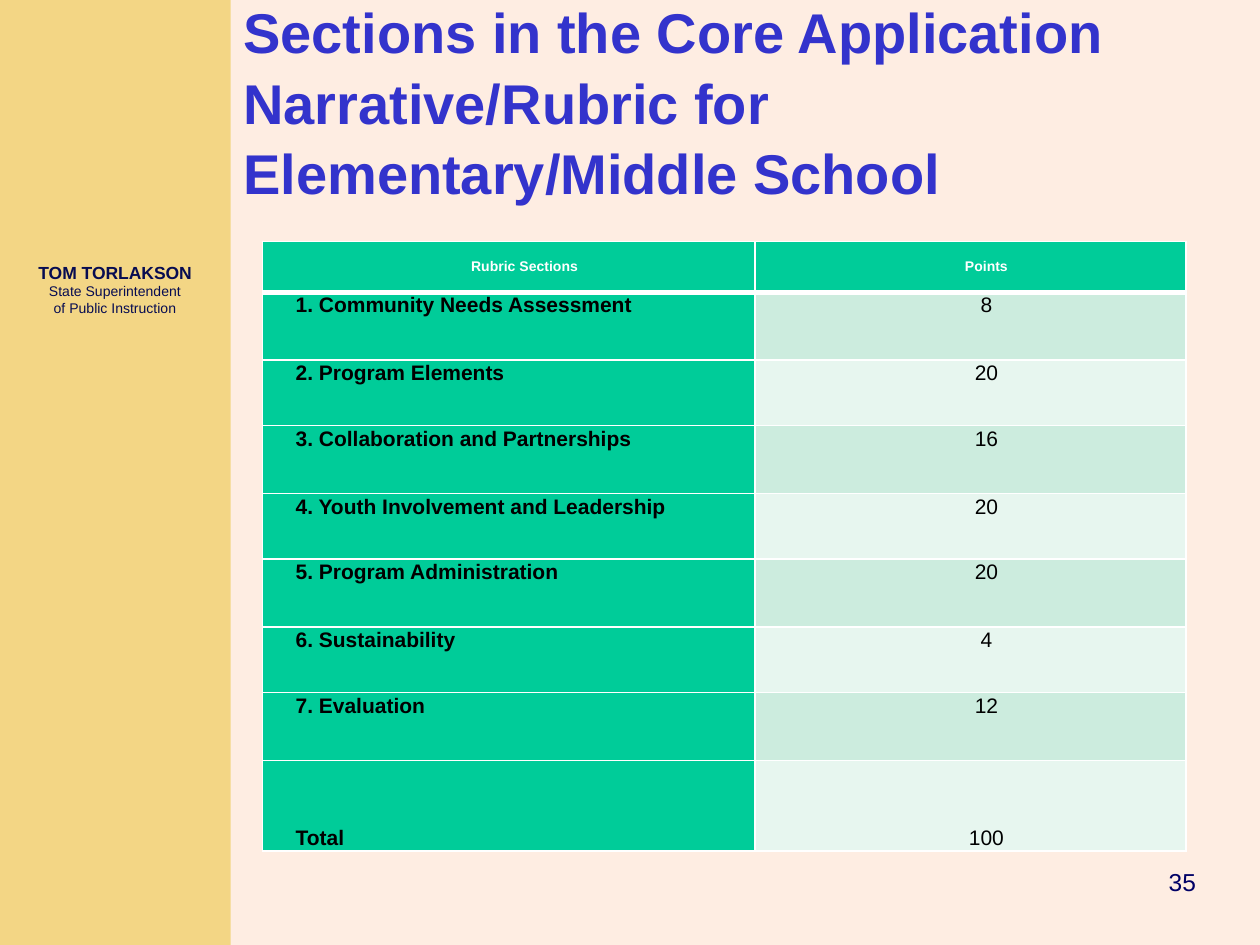
from lxml.etree import SubElement
from pptx import Presentation
from pptx.dml.color import RGBColor
from pptx.enum.shapes import MSO_SHAPE
from pptx.enum.text import MSO_ANCHOR, MSO_AUTO_SIZE, PP_ALIGN
from pptx.oxml.ns import qn
from pptx.util import Cm, Pt

ROWS = [
    ("Rubric Sections", "Points"),
    ("1. Community Needs Assessment", "8"),
    ("2. Program Elements", "20"),
    ("3. Collaboration and Partnerships", "16"),
    ("4. Youth Involvement and Leadership", "20"),
    ("5. Program Administration", "20"),
    ("6. Sustainability", "4"),
    ("7. Evaluation", "12"),
    ("Total", "100"),
]
WIDTHS = (9.93, 8.69)
HEIGHTS = [1.02] + [1.37, 1.32] * 3 + [1.37, 1.83]
GREEN, BANDS = "00CC99", ("E7F6EF", "CCECDE")


def paint(target, color):
    """Give a shape or cell a solid fill."""
    target.fill.solid()
    target.fill.fore_color.rgb = RGBColor.from_string(color)


def add_run(par, text, size, color, bold=False):
    """Add one formatted run to a paragraph."""
    run = par.add_run()
    run.text = text
    font = run.font
    font.name, font.size, font.bold = "Arial", Pt(size), bold
    font.color.rgb = RGBColor.from_string(color)


def add_panel(slide, width, color):
    """Add a full-height background panel at the left edge."""
    panel = slide.shapes.add_shape(MSO_SHAPE.RECTANGLE, 0, 0, Cm(width), Cm(19.05))
    panel.shadow.inherit = False
    panel.line.fill.background()
    paint(panel, color)


def add_text(slide, box, lines, align, anchor, color):
    """Add a text box whose lines are (text, size, bold)."""
    frame = slide.shapes.add_textbox(*map(Cm, box)).text_frame
    frame.word_wrap = True
    frame.vertical_anchor = anchor
    par = frame.paragraphs[0]
    par.alignment = align
    for i, (text, size, bold) in enumerate(lines):
        if i:
            par.add_line_break()
        add_run(par, text, size, color, bold)


def set_title(slide, text):
    """Place and format the title placeholder."""
    title = slide.shapes.title
    title.left, title.top, title.width, title.height = map(Cm, (4.65, -0.84, 20.75, 5.72))
    frame = title.text_frame
    frame.word_wrap = True
    frame.auto_size = MSO_AUTO_SIZE.NONE
    frame.vertical_anchor = MSO_ANCHOR.MIDDLE
    par = frame.paragraphs[0]
    par.alignment = PP_ALIGN.LEFT
    par.line_spacing = 1.05
    add_run(par, text, 32, "3333CC", True)


def add_rules(cell, widths):
    """Draw white cell borders, given points per side."""
    props = cell._tc.get_or_add_tcPr()
    for side, width in widths.items():
        line = SubElement(props, qn(f"a:ln{side}"), w=str(Pt(width)))
        fill = SubElement(line, qn("a:solidFill"))
        SubElement(fill, qn("a:srgbClr"), val="FFFFFF")


def fill_cell(cell, text, row, col):
    """Write and style one table cell."""
    head, last = row == 0, row == len(ROWS) - 1
    add_rules(cell, {"L": 1, "R": 1, "T": 3 if row == 1 else 1, "B": 3 if head else 1})
    paint(cell, GREEN if head or col == 0 else BANDS[row % 2])
    cell.margin_left = cell.margin_right = Cm(0.03)
    cell.margin_top = cell.margin_bottom = Cm(0.03)
    cell.vertical_anchor = (
        MSO_ANCHOR.MIDDLE if head else MSO_ANCHOR.BOTTOM if last else MSO_ANCHOR.TOP
    )
    par = cell.text_frame.paragraphs[0]
    par.alignment = PP_ALIGN.CENTER if head or col else PP_ALIGN.LEFT
    props = par._p.get_or_add_pPr()
    props.set("marL", str(Cm(0.64)))
    props.set("indent", "0")
    add_run(par, text, 8 if head else 12, "FFFFFF" if head else "000000", head or col == 0)


def add_rubric(slide):
    """Add the table of rubric sections and points."""
    table = slide.shapes.add_table(
        len(ROWS), len(WIDTHS), Cm(5.29), Cm(4.87), Cm(sum(WIDTHS)), Cm(sum(HEIGHTS))
    ).table
    table.first_row = table.horz_banding = False
    for col, width in zip(table.columns, WIDTHS):
        col.width = Cm(width)
    for i, (texts, height) in enumerate(zip(ROWS, HEIGHTS)):
        table.rows[i].height = Cm(height)
        for j, text in enumerate(texts):
            fill_cell(table.cell(i, j), text, i, j)


def main():
    """Build and save the slide."""
    deck = Presentation()
    deck.slide_width, deck.slide_height = Cm(25.4), Cm(19.05)
    slide = deck.slides.add_slide(deck.slide_layouts[5])
    add_panel(slide, 25.4, "FEEDE2")
    add_panel(slide, 4.65, "F3D685")
    lines = [
        ("TOM TORLAKSON", 10, True),
        ("State Superintendent", 8, False),
        ("of Public Instruction", 8, False),
    ]
    add_text(slide, (0.2, 4.88, 4.24, 1.9), lines,
             PP_ALIGN.CENTER, MSO_ANCHOR.MIDDLE, "070C51")
    add_text(slide, (19.71, 17.35, 4.65, 1.27), [("35", 14, False)],
             PP_ALIGN.RIGHT, MSO_ANCHOR.TOP, "000066")
    set_title(slide, "Sections in the Core Application Narrative/Rubric for "
                     "Elementary/Middle School")
    add_rubric(slide)
    # The title placeholder precedes the panels, so bring it forward.
    slide.shapes._spTree.append(slide.shapes.title._element)
    deck.save("out.pptx")


if __name__ == "__main__":
    main()
